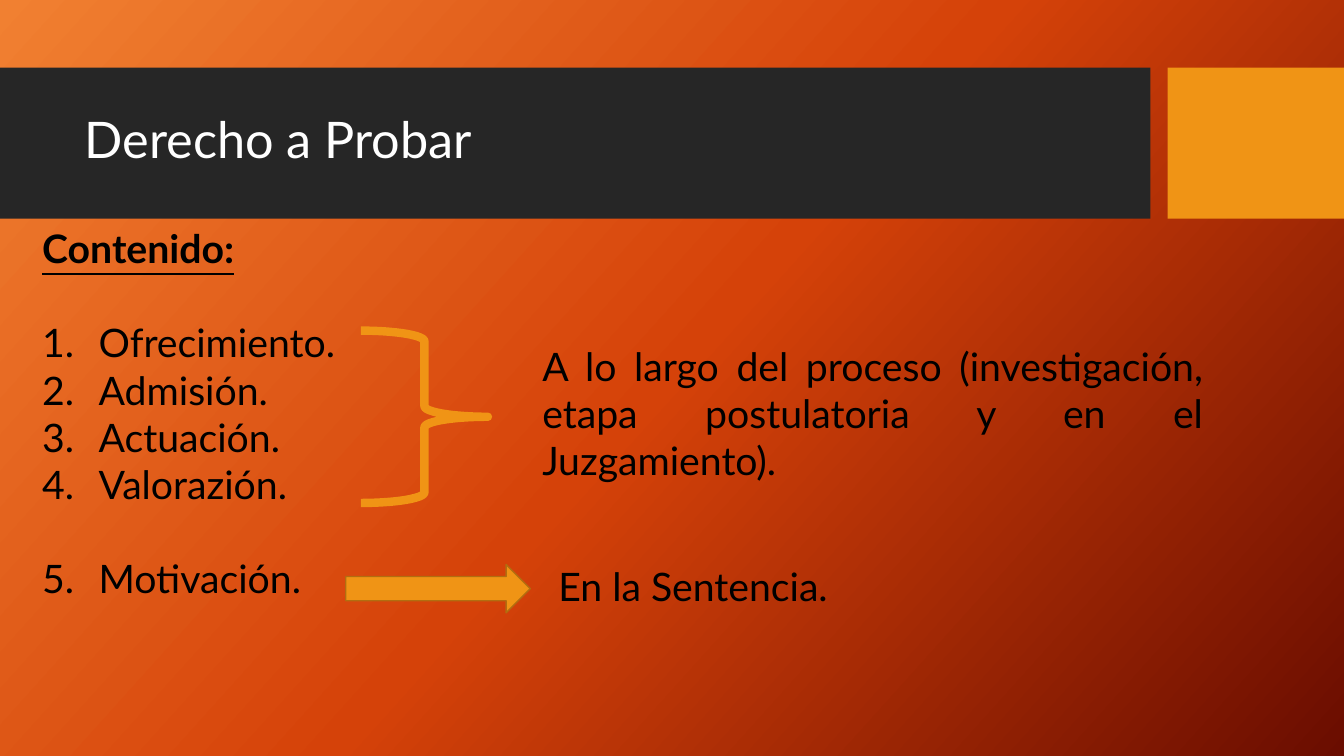
from lxml import etree
from pptx import Presentation
from pptx import util as u
from pptx.dml.color import RGBColor
from pptx.enum import shapes, text
from pptx.oxml.ns import qn

PX = 9144  # EMU per px, 100 px to the inch
FONT = "Lato"
BLACK = RGBColor(0x00, 0x00, 0x00)
WHITE = RGBColor(0xFF, 0xFF, 0xFF)
CHARCOAL = RGBColor(0x26, 0x26, 0x26)
AMBER = RGBColor(0xF0, 0x94, 0x15)
BRONZE = RGBColor(0xB2, 0x6D, 0x10)
GRADIENT = [
    (0, RGBColor(0xF1, 0x80, 0x31)),
    (50, RGBColor(0xD5, 0x42, 0x09)),
    (100, RGBColor(0x6A, 0x0D, 0x00)),
]

deck = Presentation()
deck.slide_width, deck.slide_height = 1333 * PX, 750 * PX
page = deck.slides.add_slide(deck.slide_layouts[5])


def write(para, wording, size=28, color=BLACK, align=text.PP_ALIGN.JUSTIFY,
          bold=False, underline=False, numbered=False, before=0):
    para.alignment = align
    para.space_before = u.Pt(before)
    if numbered:
        props = para._p.get_or_add_pPr()
        props.set("marL", str(56 * PX))
        props.set("indent", str(-56 * PX))
        etree.SubElement(props, qn("a:buFont"), typeface="+mj-lt")
        etree.SubElement(props, qn("a:buAutoNum"), type="arabicPeriod")
    span = para.add_run()
    span.text = wording
    span.font.name, span.font.size = FONT, u.Pt(size)
    span.font.bold, span.font.underline = bold, underline
    span.font.color.rgb = color


def add_figure(kind, left, top, width, height, fill=None, line=None, weight=1):
    figure = page.shapes.add_shape(
        kind, left * PX, top * PX, width * PX, height * PX)
    figure.shadow.inherit = False
    if fill is None:
        figure.fill.background()
    else:
        figure.fill.solid()
        figure.fill.fore_color.rgb = fill
    if line is None:
        figure.line.fill.background()
    else:
        figure.line.color.rgb = line
        figure.line.width = u.Pt(weight)
    return figure


# Background gradient with three stops
background = page.background.fill
background.gradient()
background.gradient_angle = 318
stops = page.element.find(".//" + qn("a:gsLst"))
for stop in list(stops):
    stops.remove(stop)
for percent, color in GRADIENT:
    stop = etree.SubElement(stops, qn("a:gs"), pos=str(percent * 1000))
    etree.SubElement(stop, qn("a:srgbClr"), val=str(color))

# Title on its band, with the amber block at the right
title = page.shapes.title
for left, width, color in [(0, 1141, CHARCOAL), (1158, 175, AMBER)]:
    band = add_figure(shapes.MSO_SHAPE.RECTANGLE, left, 67, width, 150, color)
    title.element.addprevious(band.element)
title.left, title.top = 74 * PX, 82 * PX
title.width, title.height = 1051 * PX, 118 * PX
title.text_frame.auto_size = text.MSO_AUTO_SIZE.NONE
title.text_frame.vertical_anchor = text.MSO_ANCHOR.MIDDLE
heading = title.text_frame.paragraphs[0]
write(heading, "Derecho a Probar", size=36, color=WHITE,
      align=text.PP_ALIGN.LEFT)
heading.line_spacing = 0.9

# Contents list and the two remarks
LINE_GAP = 33.6  # height of one 28 pt line
text_boxes = [
    ((32, 218, 1269, 434), [
        ("Contenido:", dict(bold=True, underline=True)),
        ("Ofrecimiento.", dict(numbered=True, before=LINE_GAP)),
        ("Admisión.", dict(numbered=True)),
        ("Actuación.", dict(numbered=True)),
        ("Valorazión.", dict(numbered=True)),
        ("Motivación.", dict(numbered=True, before=LINE_GAP)),
    ]),
    ((528, 335, 675, 151), [
        ("A lo largo del proceso (investigación, etapa postulatoria "
         "y en el Juzgamiento).", {}),
    ]),
    ((544, 553, 675, 57), [("En la Sentencia.", {})]),
]
for place, lines in text_boxes:
    box = page.shapes.add_textbox(*[length * PX for length in place])
    frame = box.text_frame
    frame.word_wrap = True
    for index, (wording, style) in enumerate(lines):
        para = frame.add_paragraph() if index else frame.paragraphs[0]
        write(para, wording, **style)

# Brace and arrow from the list to the remarks
add_figure(shapes.MSO_SHAPE.RIGHT_BRACE, 358, 328, 126, 171,
           line=AMBER, weight=6)
add_figure(shapes.MSO_SHAPE.RIGHT_ARROW, 343, 560, 183, 48,
           fill=AMBER, line=BRONZE)

deck.save("out.pptx")
